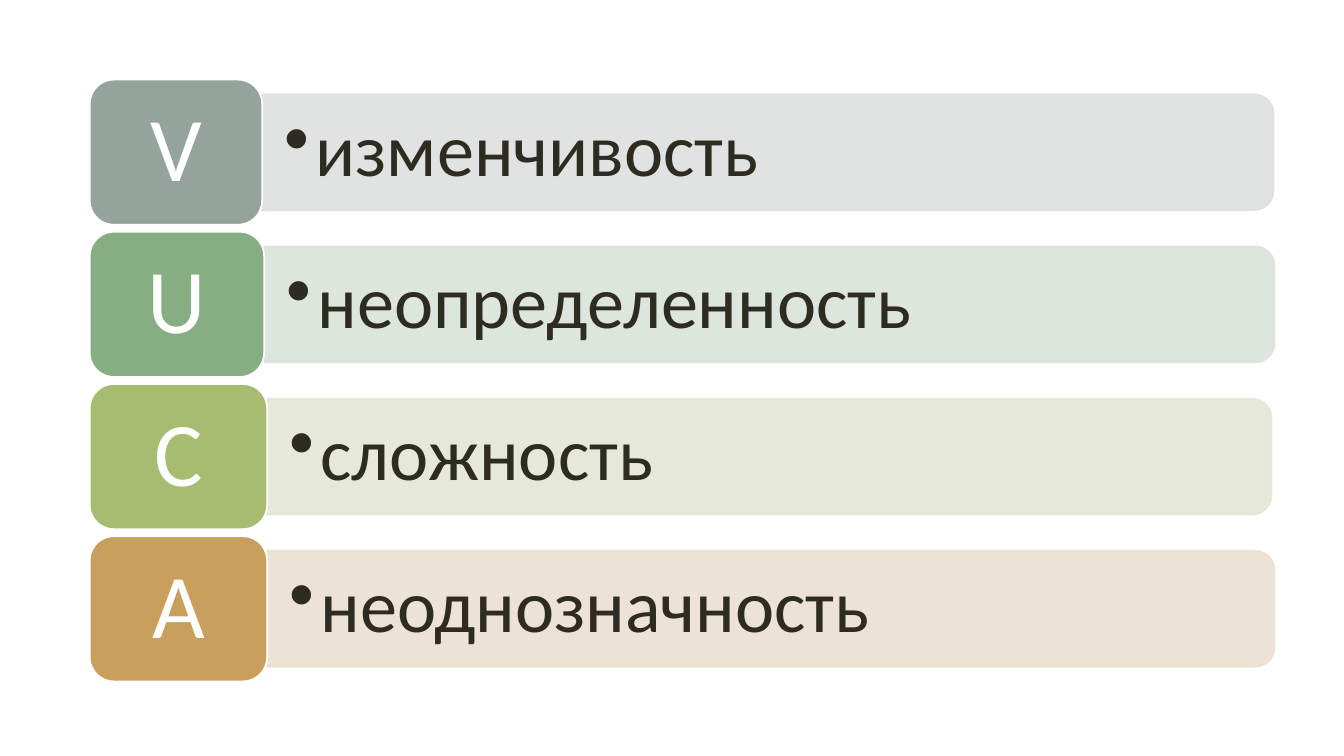
from lxml import etree
from pptx import Presentation
from pptx import util as u
from pptx.dml.color import RGBColor
from pptx.enum import shapes, text
from pptx.oxml.ns import qn

COLORS = {
    "ink": "2E2B21", "white": "FFFFFF",
    "gray": "95A39D", "pale gray": "DDE0DF",
    "green": "87AE83", "pale green": "DAE4D9",
    "olive": "A7BB71", "pale olive": "E4E7D5",
    "amber": "C89F5D", "pale amber": "EBDFD2",
}
ROWS = [
    ("V", "изменчивость", "gray", 2.6, 12.63),
    ("U", "неопределенность", "green", 2.62, 12.64),
    ("C", "сложность", "olive", 2.65, 12.61),
    ("A", "неоднозначность", "amber", 2.65, 12.64),
]
TILE_LEFT, TILE_HEIGHT = 0.89, 1.44
BAR_HEIGHT, LABEL_HEIGHT = 1.15, 1.04
FIRST_MIDDLE, ROW_STEP = 1.51, 1.51


def rgb(name):
    return RGBColor.from_string(COLORS[name])


def write(shape, content, size, color, inset, align=text.PP_ALIGN.LEFT, bullet=None):
    frame = shape.text_frame
    frame.word_wrap = True
    frame.vertical_anchor = text.MSO_ANCHOR.MIDDLE
    frame.margin_left = frame.margin_right = u.Inches(inset)
    frame.margin_top = frame.margin_bottom = u.Inches(inset / 2)
    paragraph = frame.paragraphs[0]
    paragraph.alignment = align
    paragraph.line_spacing = 0.9
    run = paragraph.add_run()
    run.text = content
    run.font.name = "Calibri"
    run.font.size = u.Pt(size)
    run.font.color.rgb = rgb(color)
    if bullet:
        paragraph.level = 1
        properties = paragraph._p.get_or_add_pPr()
        properties.set("marL", str(u.Inches(0.31)))
        properties.set("indent", str(-u.Inches(0.31)))
        etree.SubElement(properties, qn("a:buChar")).set("char", bullet)


class AcronymSlide:
    def __init__(self, presentation):
        self.slide = presentation.slides.add_slide(presentation.slide_layouts[6])

    def block(self, kind, left, top, width, height, fill, line, opacity=None):
        shape = self.slide.shapes.add_shape(
            kind, u.Inches(left), u.Inches(top), u.Inches(width), u.Inches(height))
        shape.shadow.inherit = False
        shape.fill.solid()
        shape.fill.fore_color.rgb = rgb(fill)
        shape.line.color.rgb = rgb(line)
        shape.line.width = u.Pt(1.25)
        if opacity:
            for color in shape._element.spPr.iter(qn("a:srgbClr")):
                etree.SubElement(color, qn("a:alpha")).set("val", str(opacity * 1000))
        return shape

    def bar(self, left, right, middle, color):
        length = right - left
        shape = self.block(
            shapes.MSO_SHAPE.ROUND_2_SAME_RECTANGLE,
            (left + right - BAR_HEIGHT) / 2, middle - length / 2,
            BAR_HEIGHT, length, color, color, opacity=90)
        shape.rotation = 90

    def label(self, left, right, middle, content):
        shape = self.slide.shapes.add_textbox(
            u.Inches(left), u.Inches(middle - LABEL_HEIGHT / 2),
            u.Inches(right - left - 0.06), u.Inches(LABEL_HEIGHT))
        write(shape, content, 53, "ink", 0.22, bullet="•")

    def tile(self, right, middle, letter, color):
        shape = self.block(
            shapes.MSO_SHAPE.ROUNDED_RECTANGLE, TILE_LEFT, middle - TILE_HEIGHT / 2,
            right - TILE_LEFT, TILE_HEIGHT, color, "white")
        write(shape, letter, 65, "white", 0.27, align=text.PP_ALIGN.CENTER)


def main():
    presentation = Presentation()
    presentation.slide_width = u.Inches(13.33)
    presentation.slide_height = u.Inches(7.5)
    acronym = AcronymSlide(presentation)
    for index, (letter, meaning, color, left, right) in enumerate(ROWS):
        middle = FIRST_MIDDLE + index * ROW_STEP
        acronym.bar(left, right, middle, f"pale {color}")
        acronym.label(left, right, middle, meaning)
        acronym.tile(left, middle, letter, color)
    presentation.save("out.pptx")


if __name__ == "__main__":
    main()
